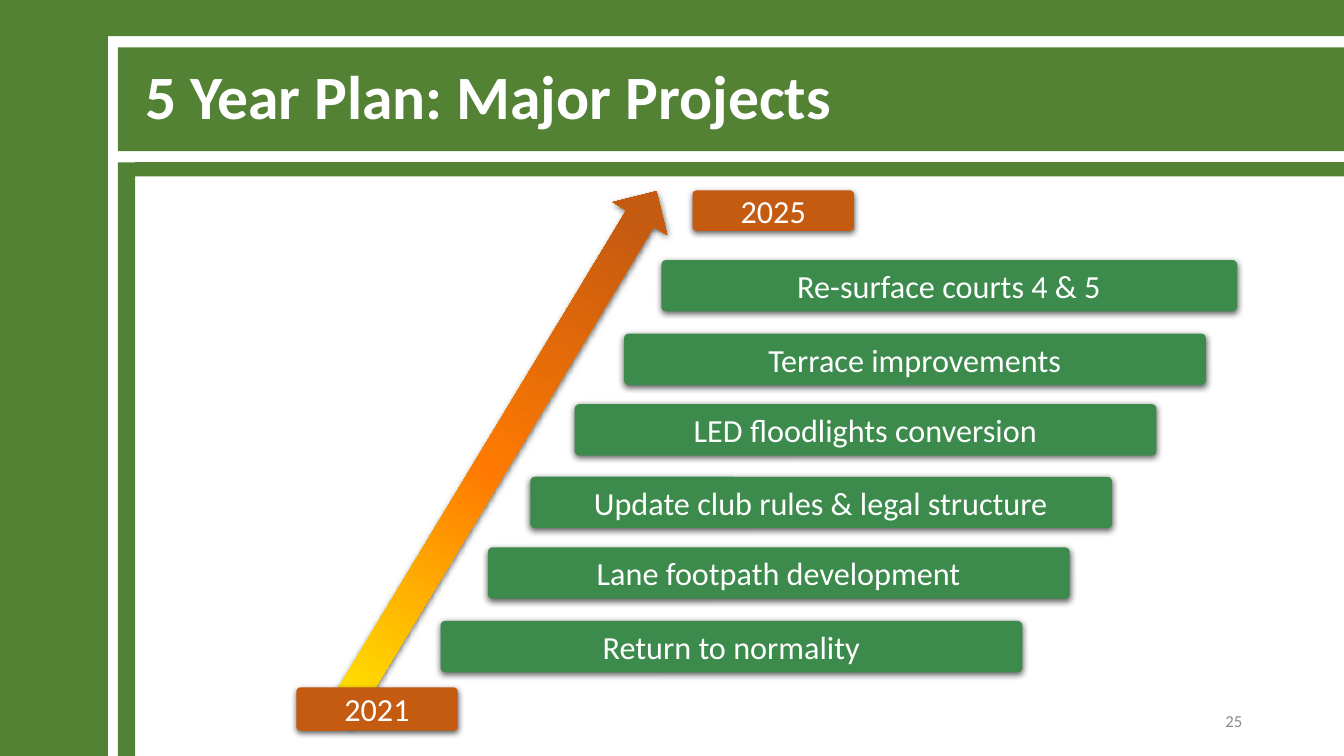
from lxml import etree
from pptx import Presentation
from pptx.dml.color import RGBColor
from pptx.enum.shapes import MSO_SHAPE
from pptx.enum.text import MSO_ANCHOR, MSO_AUTO_SIZE, PP_ALIGN
from pptx.oxml.ns import qn
from pptx.util import Inches, Pt

RECT = MSO_SHAPE.RECTANGLE
ROUNDED = MSO_SHAPE.ROUNDED_RECTANGLE
UP_ARROW = MSO_SHAPE.UP_ARROW
MIDDLE = MSO_ANCHOR.MIDDLE
NO_AUTOFIT = MSO_AUTO_SIZE.NONE
LEFT, CENTER, RIGHT = PP_ALIGN.LEFT, PP_ALIGN.CENTER, PP_ALIGN.RIGHT

FRAME_GREEN = "548235"
PROJECT_GREEN = "3D8B4C"
YEAR_ORANGE = "C55A11"
WHITE = "FFFFFF"
GREY = "8C8C8C"

# left, top, width, height
FRAME_BARS = [
    (0, 0, 1.07, 7.5),
    (1.17, 1.61, 0.17, 5.89),
    (1.17, 0.47, 12.16, 1.03),
    (1.34, 1.61, 11.99, 0.14),
    (1.07, 0, 12.26, 0.36),
]
# text, left, top, width
PROJECTS = [
    ("Re-surface courts 4 & 5", 6.56, 2.58, 5.71),
    ("Terrace improvements", 6.19, 3.31, 5.77),
    ("LED floodlights conversion", 5.7, 4.01, 5.77),
    ("Update club rules & legal structure", 5.26, 4.73, 5.77),
    ("Lane footpath development", 4.84, 5.43, 5.77),
    ("Return to normality", 4.37, 6.16, 5.77),
]
ARROW_STOPS = [(0, "FFF200"), (47, "FF7A00"), (90, YEAR_ORANGE)]


def rgb(color):
    return RGBColor.from_string(color)


def write(sp, text, size=23, color=WHITE, bold=False, align=CENTER, spacing=None):
    tf = sp.text_frame
    tf.word_wrap = True
    tf.auto_size = NO_AUTOFIT
    tf.vertical_anchor = MIDDLE
    p = tf.paragraphs[0]
    p.alignment = align
    if spacing:
        p.line_spacing = spacing
    r = p.add_run()
    r.text = text
    r.font.name = "Calibri"
    r.font.size = Pt(size)
    r.font.bold = bold
    r.font.color.rgb = rgb(color)


def add_block(s, kind, box, fill=None):
    sp = s.shapes.add_shape(kind, *map(Inches, box))
    sp.shadow.inherit = False
    sp.line.fill.background()
    if fill:
        sp.fill.solid()
        sp.fill.fore_color.rgb = rgb(fill)
    return sp


def add_color(parent, color):
    return etree.SubElement(parent, qn("a:srgbClr"), val=color)


def add_shadow(sp):
    effects = sp.element.spPr.find(qn("a:effectLst"))
    shadow = etree.SubElement(
        effects, qn("a:outerShdw"), blurRad=str(Pt(4.5)), dist=str(Pt(1.5)),
        dir="5400000", algn="ctr", rotWithShape="0")
    etree.SubElement(add_color(shadow, "000000"), qn("a:alpha"), val="63000")


def add_label(s, text, box, fill):
    sp = add_block(s, ROUNDED, box, fill)
    sp.adjustments[0] = 0.09
    add_shadow(sp)
    write(sp, text)


def add_arrow(s):
    sp = add_block(s, UP_ARROW, (4.62, 1.46, 0.63, 6.1))
    sp.rotation = 31.1
    sp.fill.gradient()
    sp.fill.gradient_angle = 90
    stops = sp.element.spPr.find(".//" + qn("a:gsLst"))
    for stop in list(stops):
        stops.remove(stop)
    for percent, color in ARROW_STOPS:
        add_color(etree.SubElement(stops, qn("a:gs"), pos=str(percent * 1000)), color)
    add_shadow(sp)


def add_title(s, text):
    title = s.shapes.title
    title.left, title.top = Inches(1.34), Inches(0.26)
    title.width, title.height = Inches(11.5), Inches(1.45)
    write(title, text, size=44, bold=True, align=LEFT, spacing=0.9)
    # Bring the title in front of the green band
    title.element.getparent().append(title.element)


def main():
    prs = Presentation()
    prs.slide_width, prs.slide_height = Inches(13.33), Inches(7.5)
    s = prs.slides.add_slide(prs.slide_layouts[5])

    # Green frame, title and page number
    for box in FRAME_BARS:
        add_block(s, RECT, box, FRAME_GREEN)
    add_title(s, "5 Year Plan: Major Projects")
    number = s.shapes.add_textbox(*map(Inches, (9.42, 6.95, 3, 0.4)))
    write(number, "25", size=12, color=GREY, align=RIGHT)

    # Timeline arrow with its end years
    add_arrow(s)
    add_label(s, "2025", (6.87, 1.89, 1.6, 0.4), YEAR_ORANGE)
    add_label(s, "2021", (2.94, 6.82, 1.6, 0.43), YEAR_ORANGE)

    # Projects, latest at the top
    for text, left, top, width in PROJECTS:
        add_label(s, text, (left, top, width, 0.51), PROJECT_GREEN)

    prs.save("out.pptx")


if __name__ == "__main__":
    main()
